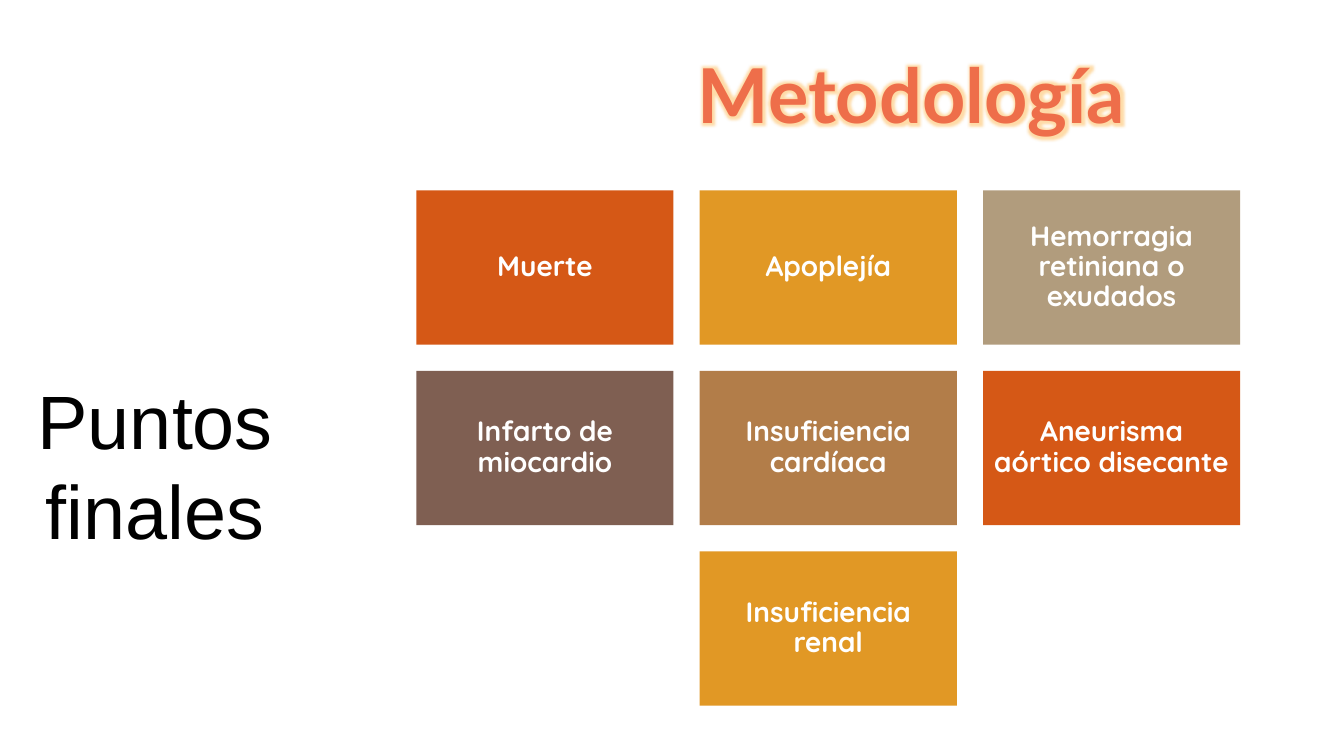
import pptx
import pptx.util
import pptx.dml.color
import pptx.enum.shapes
import pptx.enum.text
import pptx.oxml
import pptx.oxml.ns
from pptx.util import Inches


def color(hex_code):
    return pptx.dml.color.RGBColor.from_string(hex_code)


class SlideBuilder:
    """Hold the shared style and the slide being built."""

    card_font = "Quicksand"
    card_size = 20
    card_inset = 0.08
    heading_size = 54

    def __init__(self, slide):
        self.slide = slide

    def label(self, shape, text, font_name, size, hex_code, bold):
        frame = shape.text_frame
        frame.text = text
        frame.word_wrap = True
        frame.vertical_anchor = pptx.enum.text.MSO_ANCHOR.MIDDLE
        paragraph = frame.paragraphs[0]
        paragraph.alignment = pptx.enum.text.PP_ALIGN.CENTER
        run = paragraph.runs[0]
        run.font.name = font_name
        run.font.size = pptx.util.Pt(size)
        run.font.bold = bold
        run.font.color.rgb = color(hex_code)
        return paragraph

    def card(self, text, left, top, width, height, fill):
        card = self.slide.shapes.add_shape(
            pptx.enum.shapes.MSO_SHAPE.RECTANGLE,
            Inches(left), Inches(top), Inches(width), Inches(height))
        card.shadow.inherit = False
        card.fill.solid()
        card.fill.fore_color.rgb = color(fill)
        card.line.fill.background()
        frame = card.text_frame
        frame.margin_left = frame.margin_right = Inches(self.card_inset)
        frame.margin_top = frame.margin_bottom = Inches(self.card_inset)
        paragraph = self.label(card, text, self.card_font, self.card_size, "FFFFFF", True)
        paragraph.line_spacing = 0.9

    def heading(self, text, left, top, width, height, font_name, hex_code, bold=False):
        heading = self.slide.shapes.add_textbox(
            Inches(left), Inches(top), Inches(width), Inches(height))
        return self.label(heading, text, font_name, self.heading_size, hex_code, bold)

    def glow(self, paragraph, hex_code, radius, opacity):
        properties = paragraph.runs[0].font._element
        effects = pptx.oxml.parse_xml(
            f'<a:effectLst {pptx.oxml.ns.nsdecls("a")}>'
            f'<a:glow rad="{pptx.util.Pt(radius)}"><a:srgbClr val="{hex_code}">'
            f'<a:alpha val="{opacity * 1000}"/></a:srgbClr></a:glow></a:effectLst>')
        properties.find(pptx.oxml.ns.qn("a:solidFill")).addnext(effects)


def main():
    presentation = pptx.Presentation()
    presentation.slide_width = Inches(13.33)
    presentation.slide_height = Inches(7.5)
    builder = SlideBuilder(presentation.slides.add_slide(presentation.slide_layouts[6]))

    endpoint_rows = [
        [("Muerte", "D55816"), ("Apoplejía", "E19825"),
         ("Hemorragia retiniana o exudados", "B19C7D")],
        [("Infarto de miocardio", "7F5F52"), ("Insuficiencia cardíaca", "B27D49"),
         ("Aneurisma aórtico disecante", "D55816")],
        [("Insuficiencia renal", "E19825")],
    ]
    grid_left, grid_top = 4.13, 1.89
    card_width, card_height, gap = 2.55, 1.53, 0.26
    columns = 3
    for row, endpoints in enumerate(endpoint_rows):
        first_column = (columns - len(endpoints)) / 2
        for position, (endpoint, fill) in enumerate(endpoints):
            left = grid_left + (first_column + position) * (card_width + gap)
            top = grid_top + row * (card_height + gap)
            builder.card(endpoint, left, top, card_width, card_height, fill)

    section_title = builder.heading(
        "Metodología", 4.77, 0.49, 8.54, 0.87, "Lato", "EE6E4A", bold=True)
    builder.glow(section_title, "FFA726", 8, 40)
    builder.heading("Puntos finales", 0.27, 4.17, 2.54, 0.87, "Arial", "000000")

    presentation.save("out.pptx")


if __name__ == "__main__":
    main()
